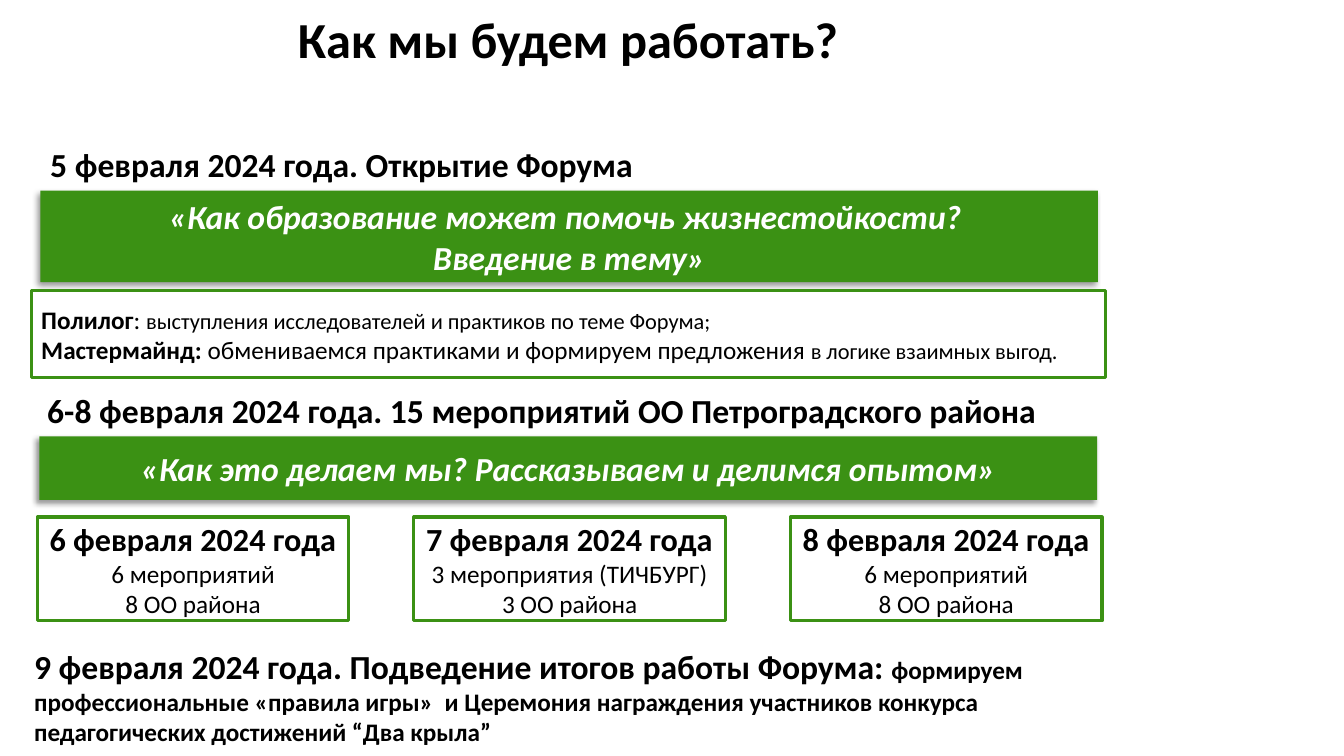
from dataclasses import dataclass
from typing import Any, Optional

from lxml.etree import SubElement
from pptx import Presentation
from pptx.dml.color import RGBColor
from pptx.enum.shapes import MSO_SHAPE
from pptx.enum.text import MSO_ANCHOR, MSO_AUTO_SIZE, PP_ALIGN
from pptx.oxml.ns import qn
from pptx.util import Inches, Pt

GREEN = RGBColor(0x3B, 0x91, 0x14)
BLACK = RGBColor(0x00, 0x00, 0x00)
WHITE = RGBColor(0xFF, 0xFF, 0xFF)
WIDE, HIGH = Inches(13.33), Inches(7.5)
LEFT, MID = PP_ALIGN.LEFT, PP_ALIGN.CENTER


@dataclass(frozen=True)
class Area:
    """Position and size in percent of the slide."""
    x: float
    y: float
    w: float
    h: float

    def lengths(self) -> tuple[int, int, int, int]:
        return (int(WIDE * self.x / 100), int(HIGH * self.y / 100),
                int(WIDE * self.w / 100), int(HIGH * self.h / 100))


@dataclass(frozen=True)
class Run:
    text: str
    size: float
    bold: bool = True
    slant: bool = False
    color: RGBColor = BLACK


Lines = list[list[Run]]


@dataclass(frozen=True)
class Block:
    area: Area
    lines: Lines
    align: PP_ALIGN = LEFT
    fill: Optional[RGBColor] = None


def apply(item: Any, values: dict[str, Any]) -> None:
    for name, value in values.items():
        setattr(item, name, value)


def write(frame: Any, lines: Lines, align: PP_ALIGN, inset: float = 0.05) -> None:
    apply(frame, {"word_wrap": True, "margin_left": Inches(0.1), "margin_right": Inches(0.1),
                  "margin_top": Inches(inset), "margin_bottom": Inches(inset)})
    for i, line in enumerate(lines):
        para = frame.add_paragraph() if i else frame.paragraphs[0]
        para.alignment = align
        for run in line:
            for j, part in enumerate(run.text.split("\n")):
                if j:
                    para.add_line_break()
                piece = para.add_run()
                piece.text = part
                apply(piece.font, {"name": "Calibri", "size": Pt(run.size),
                                   "bold": run.bold, "italic": run.slant})
                piece.font.color.rgb = run.color


def shade(shape: Any) -> None:
    effects = shape._element.spPr.find(qn("a:effectLst"))
    outer = SubElement(effects, qn("a:outerShdw"), blurRad=str(Pt(4)), dist=str(Pt(3)),
                       dir="8100000", algn="tr", rotWithShape="0")
    color = SubElement(outer, qn("a:srgbClr"), val=str(BLACK))
    SubElement(color, qn("a:alpha"), val="40000")


def panel(slide: Any, block: Block) -> None:
    shape = slide.shapes.add_shape(MSO_SHAPE.RECTANGLE, *block.area.lengths())
    shape.shadow.inherit = False
    if block.fill is None:
        shape.fill.background()
        shape.line.color.rgb = GREEN
        shape.line.width = Pt(2.25)
    else:
        shape.fill.solid()
        shape.fill.fore_color.rgb = block.fill
        shape.line.fill.background()
        shade(shape)
    shape.text_frame.vertical_anchor = MSO_ANCHOR.MIDDLE
    write(shape.text_frame, block.lines, block.align)


def label(slide: Any, block: Block, inset: float = 0.05) -> None:
    frame = slide.shapes.add_textbox(*block.area.lengths()).text_frame
    write(frame, block.lines, block.align, inset)
    frame.auto_size = MSO_AUTO_SIZE.SHAPE_TO_FIT_TEXT


def banner(area: Area, text: str) -> Block:
    return Block(area, [[Run(text, 24, slant=True, color=WHITE)]], MID, GREEN)


def card(col: int, day: str, events: str, schools: str) -> Block:
    lines = [[Run(day, 23)], [Run(events, 18, False)], [Run(schools, 18, False)]]
    return Block(Area(2.78 + 28.02 * col, 68.4, 23.18, 13.73), lines, MID)


DAYS = [
    ("6 февраля 2024 года", "6 мероприятий", "8 ОО района"),
    ("7 февраля 2024 года", "3 мероприятия (ТИЧБУРГ)", "3 ОО района"),
    ("8 февраля 2024 года", "6 мероприятий", "8 ОО района"),
]
PANELS = [
    banner(Area(3, 25.2, 78.7, 12.13),
           "«Как образование может помочь жизнестойкости? \nВведение в тему»"),
    banner(Area(2.93, 57.73, 78.7, 8.4),
           "«Как это делаем мы? Рассказываем и делимся опытом»"),
    *(card(col, *day) for col, day in enumerate(DAYS)),
    Block(Area(2.33, 38.4, 79.9, 11.6), [
        [Run("Полилог", 18), Run(": ", 18, False),
         Run("выступления исследователей и практиков по теме Форума;", 16, False)],
        [Run("Мастермайнд: ", 18),
         Run("обмениваемся практиками и формируем предложения ", 18, False),
         Run("в логике взаимных выгод.", 16, False)],
    ]),
]
HEADS = [
    Block(Area(3, 18.4, 78.7, 6.67), [[Run("5 февраля 2024 года. Открытие Форума", 24)]]),
    Block(Area(2.78, 50.93, 78.7, 12.13),
          [[Run("6-8 февраля 2024 года. 15 мероприятий ОО Петроградского района", 24)]]),
]
CLOSE = Block(Area(1.8, 84.13, 80.8, 16.67), [[
    Run("9 февраля 2024 года. Подведение итогов работы Форума: ", 24),
    Run("формируем профессиональные «правила игры»  и Церемония награждения "
        "участников конкурса педагогических достижений “Два крыла”", 18),
]])


def main() -> None:
    deck = Presentation()
    apply(deck, {"slide_width": WIDE, "slide_height": HIGH})
    slide = deck.slides.add_slide(deck.slide_layouts[5])
    title = slide.shapes.title
    sides = Area(1.43, 1.2, 81.7, 8.8).lengths()
    apply(title, dict(zip(("left", "top", "width", "height"), sides)))
    write(title.text_frame, [[Run("Как мы будем работать?", 36)]], MID)
    apply(title.text_frame, {"vertical_anchor": MSO_ANCHOR.MIDDLE,
                             "auto_size": MSO_AUTO_SIZE.NONE})
    title.text_frame.paragraphs[0].line_spacing = 0.9
    for block in PANELS:
        panel(slide, block)
    for block in HEADS:
        label(slide, block)
    label(slide, CLOSE, 0.1)
    deck.save("out.pptx")


if __name__ == "__main__":
    main()
